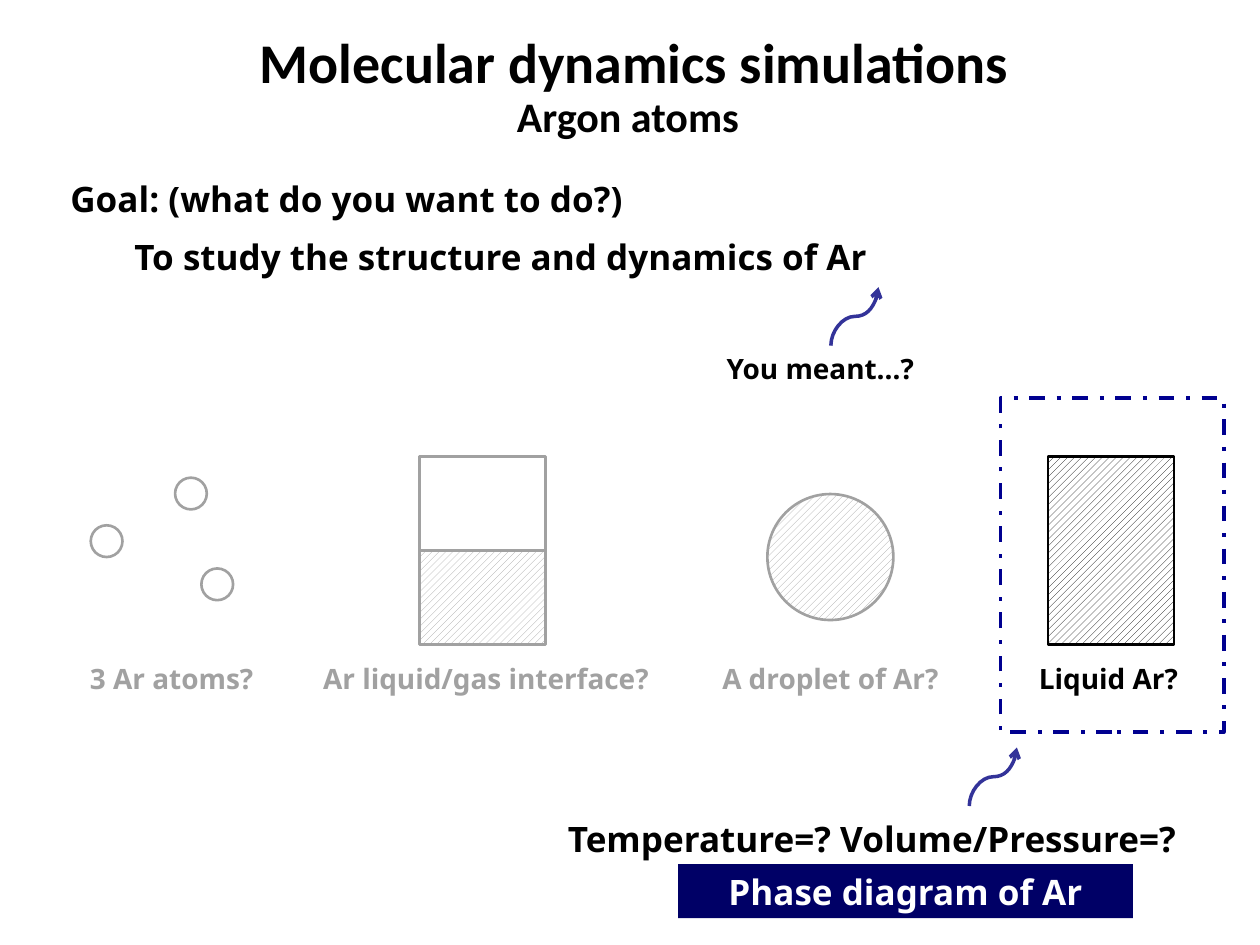
from lxml.etree import SubElement
from pptx import Presentation
from pptx.dml.color import RGBColor
from pptx.enum.dml import MSO_LINE, MSO_PATTERN
from pptx.enum.shapes import MSO_CONNECTOR, MSO_SHAPE
from pptx.enum.text import MSO_ANCHOR, PP_ALIGN
from pptx.oxml.ns import qn
from pptx.util import Cm, Pt

BLACK = RGBColor(0x00, 0x00, 0x00)
WHITE = RGBColor(0xFF, 0xFF, 0xFF)
NAVY = RGBColor(0x00, 0x00, 0x66)
FRAME_BLUE = RGBColor(0x00, 0x00, 0x90)
ARROW_BLUE = RGBColor(0x33, 0x33, 0x99)


class SlideBuilder:
    """Holds the text style and the slide being filled."""
    heading_font = "Calibri"
    body_font = "Noto Sans"

    def __init__(self, slide):
        self.slide = slide

    def add_words(self, shape, text, size, font, color, align):
        shape.text_frame.word_wrap = True
        paragraph = shape.text_frame.paragraphs[0]
        paragraph.alignment = align
        run = paragraph.add_run()
        run.text = text
        run.font.name = font
        run.font.size = Pt(size)
        run.font.bold = True
        run.font.color.rgb = color

    def text(self, text, left, top, width, height, size,
             align=PP_ALIGN.LEFT, font=body_font):
        box = self.slide.shapes.add_textbox(Cm(left), Cm(top), Cm(width), Cm(height))
        self.add_words(box, text, size, font, BLACK, align)

    def shape(self, kind, left, top, width, height, fill=None, line=BLACK, weight=1.5):
        shape = self.slide.shapes.add_shape(kind, Cm(left), Cm(top), Cm(width), Cm(height))
        shape.shadow.inherit = False
        if fill is None:
            shape.fill.background()
        else:
            shape.fill.solid()
            shape.fill.fore_color.rgb = fill
        if line is None:
            shape.line.fill.background()
        else:
            shape.line.color.rgb = line
            shape.line.width = Pt(weight)
        return shape

    def liquid(self, kind, left, top, width, height):
        shape = self.shape(kind, left, top, width, height)
        shape.fill.patterned()
        shape.fill.pattern = MSO_PATTERN.WIDE_UPWARD_DIAGONAL
        shape.fill.fore_color.rgb = BLACK
        shape.fill.back_color.rgb = WHITE

    def banner(self, text, left, top, width, height):
        shape = self.shape(MSO_SHAPE.RECTANGLE, left, top, width, height, NAVY, None)
        shape.text_frame.vertical_anchor = MSO_ANCHOR.MIDDLE
        self.add_words(shape, text, 20, self.body_font, WHITE, PP_ALIGN.CENTER)

    def veil(self, left, top, width, height, opacity):
        shape = self.shape(MSO_SHAPE.RECTANGLE, left, top, width, height, WHITE, None)
        color = shape.element.spPr.find(qn("a:solidFill"))[0]
        SubElement(color, qn("a:alpha")).set("val", str(opacity * 1000))

    def curved_arrow(self, center_x, center_y, rise=1.18, run=0.96):
        # Drawn backwards, then turned a quarter so that it leaves and ends upright
        connector = self.slide.shapes.add_connector(
            MSO_CONNECTOR.CURVE,
            Cm(center_x + rise / 2), Cm(center_y + run / 2),
            Cm(center_x - rise / 2), Cm(center_y - run / 2))
        connector.line.color.rgb = ARROW_BLUE
        connector.line.width = Pt(2)
        properties = connector.element.spPr
        properties.xfrm.set("rot", "5400000")
        SubElement(properties.find(qn("a:ln")), qn("a:tailEnd")).set("type", "arrow")
        SubElement(properties, qn("a:effectLst"))


def main():
    presentation = Presentation()
    presentation.slide_width = Cm(25.4)
    presentation.slide_height = Cm(19.05)
    builder = SlideBuilder(presentation.slides.add_slide(presentation.slide_layouts[6]))

    # Headings
    for text, top, height, size in (("Argon atoms", 1.7, 1.27, 24),
                                    (" Molecular dynamics simulations", 0.43, 1.6, 32)):
        builder.text(text, 1.65, top, 22.02, height, size,
                     PP_ALIGN.CENTER, builder.heading_font)

    # Goal and first question
    builder.text("Goal: (what do you want to do?)", 1.17, 3.45, 23.57, 1.12, 20)
    builder.text("To study the structure and dynamics of Ar", 2.46, 4.62, 21, 1.12, 20)
    builder.curved_arrow(17.23, 6.38)
    builder.text("You meant…?", 14.4, 6.96, 4.9, 0.94, 16)

    # Candidate systems: atoms, interface, droplet, liquid
    for left, top in ((3.53, 9.63), (4.06, 11.46), (1.83, 10.59)):
        builder.shape(MSO_SHAPE.OVAL, left, top, 0.64, 0.64, WHITE)
    builder.shape(MSO_SHAPE.RECTANGLE, 8.46, 9.2, 2.54, 1.9)
    builder.liquid(MSO_SHAPE.RECTANGLE, 8.46, 11.1, 2.54, 1.9)
    builder.liquid(MSO_SHAPE.OVAL, 15.47, 9.96, 2.54, 2.54)
    builder.liquid(MSO_SHAPE.RECTANGLE, 21.13, 9.2, 2.54, 3.8)

    # Conditions
    builder.text("Temperature=? Volume/Pressure=?", 11.2, 16.36, 13.77, 1.12, 20)
    builder.banner("Phase diagram of Ar", 13.67, 17.42, 9.17, 1.09)

    # System labels
    for text, left, width in (("Ar liquid/gas interface? ", 5.77, 8.2),
                              ("A droplet of Ar? ", 14.2, 5.23),
                              ("Liquid Ar? ", 20.07, 4.7),
                              ("3 Ar atoms? ", 1.4, 4.27)):
        builder.text(text, left, 13.21, width, 0.94, 16, PP_ALIGN.CENTER)

    # Fade the rejected systems and frame the chosen one
    builder.veil(0.97, 8.79, 18.77, 6.3, opacity=63)
    frame = builder.shape(MSO_SHAPE.RECTANGLE, 20.17, 8.03, 4.5, 6.73,
                          line=FRAME_BLUE, weight=2.25)
    frame.line.dash_style = MSO_LINE.DASH_DOT
    builder.curved_arrow(20.02, 15.66)

    presentation.save("out.pptx")


if __name__ == "__main__":
    main()
